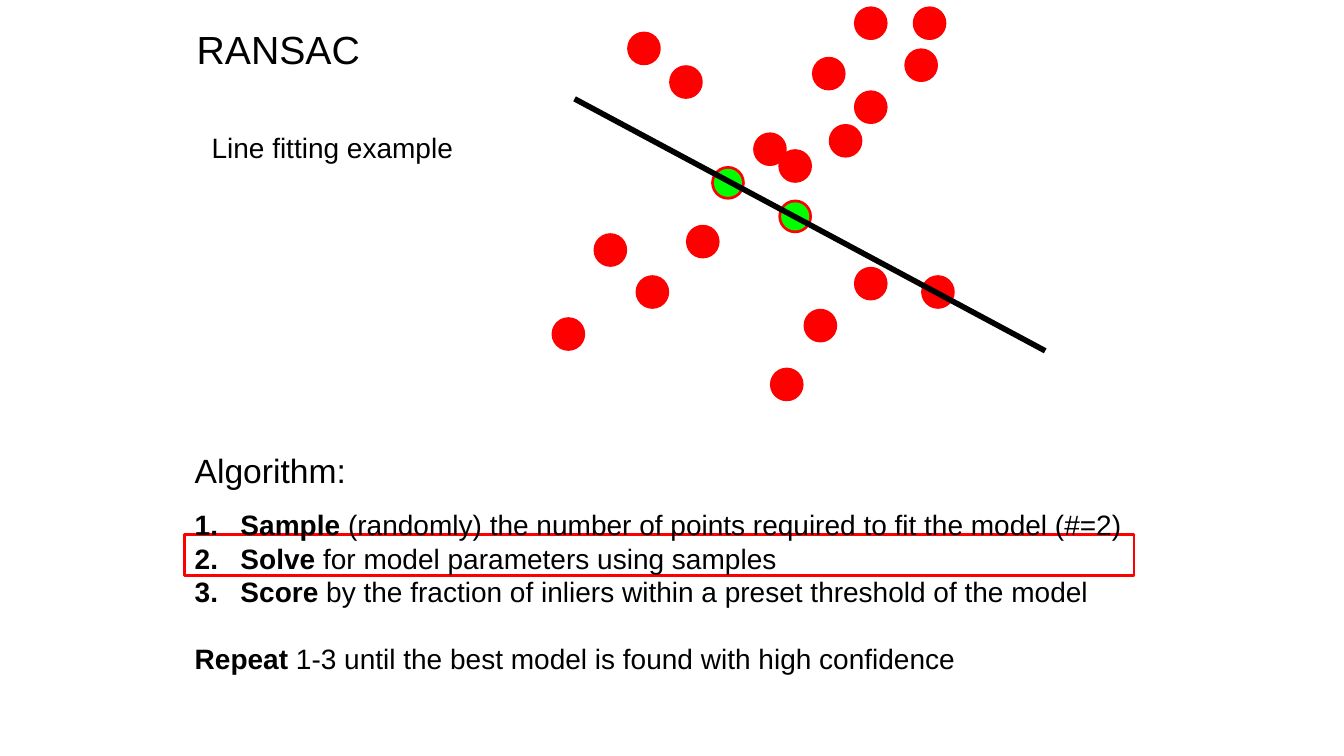
import pptx
import pptx.dml.color
import pptx.enum.shapes
import pptx.enum.text
import pptx.util
from pptx.oxml.xmlchemy import OxmlElement

Pt = pptx.util.Pt
SHAPES = pptx.enum.shapes.MSO_SHAPE
ALIGN = pptx.enum.text.PP_ALIGN

COLORS = {"outlier": "FF0000", "sample": "00FF00", "ink": "000000", "frame": "FF0000"}

# Points lie on a 6 pt grid: (column, row)
GRID, GRID_TOP, DIAMETER = 6, 0.6, 20
SAMPLES = [(85, 20), (93, 24)]
DATA = [
    (110, 33), (102, 32), (71, 28), (76, 33), (66, 38), (97, 7), (99, 15),
    (82, 27), (102, 1), (93, 18), (90, 16), (109, 1), (102, 11), (108, 6),
    (75, 4), (96, 37), (92, 44), (80, 8),
]
STEPS = [
    ("Sample", " (randomly) the number of points required to fit the model (#=2)"),
    ("Solve", " for model parameters using samples"),
    ("Score", " by the fraction of inliers within a preset threshold of the model"),
]
REPEAT = ("Repeat", " 1-3 until the best model is found with high confidence")


def rgb(name):
    return pptx.dml.color.RGBColor.from_string(COLORS[name])


def add_outlined(slide, kind, box, fill, line, width):
    sp = slide.shapes.add_shape(kind, *map(Pt, box))
    sp.shadow.inherit = False
    if fill:
        sp.fill.solid()
        sp.fill.fore_color.rgb = rgb(fill)
    else:
        sp.fill.background()
    if line:
        sp.line.color.rgb = rgb(line)
        sp.line.width = Pt(width)
    else:
        sp.line.fill.background()


def add_point(slide, cell, fill, line=None):
    col, row = cell
    box = (GRID * col, GRID * row + GRID_TOP, DIAMETER, DIAMETER)
    add_outlined(slide, SHAPES.OVAL, box, fill, line, 4)


def add_model_line(slide, start, end):
    line = slide.shapes.add_connector(
        pptx.enum.shapes.MSO_CONNECTOR.STRAIGHT, *map(Pt, start + end))
    line.line.color.rgb = rgb("ink")
    line.line.width = Pt(4)
    line._element.spPr.append(OxmlElement("a:effectLst"))


def add_text_box(slide, box, wrap):
    tf = slide.shapes.add_textbox(*map(Pt, box)).text_frame
    tf.word_wrap = wrap
    return tf


def add_run(p, text, size, bold=False):
    r = p.add_run()
    r.text = text
    font = {"name": "Arial", "size": Pt(size), "bold": bold}
    for key, value in font.items():
        setattr(r.font, key, value)
    r.font.color.rgb = rgb("ink")


def add_label(slide, box, text, size, align):
    p = add_text_box(slide, box, False).paragraphs[0]
    p.alignment = align
    add_run(p, text, size)


def number(p, indent):
    """Give the paragraph an automatic number with a hanging indent."""
    pPr = p._p.get_or_add_pPr()
    pPr.set("marL", str(Pt(indent)))
    pPr.set("indent", str(-Pt(indent)))
    bullet = OxmlElement("a:buAutoNum")
    bullet.set("type", "arabicPeriod")
    pPr.append(bullet)


def add_sentence(tf, lead, rest, gap):
    p = tf.add_paragraph()
    layout = {"line_spacing": Pt(24), "space_before": Pt(gap)}
    for key, value in layout.items():
        setattr(p, key, value)
    add_run(p, lead, 20, True)
    add_run(p, rest, 20)
    return p


def add_algorithm(slide, box):
    tf = add_text_box(slide, box, True)
    add_run(tf.paragraphs[0], "Algorithm:", 24)
    for i, step in enumerate(STEPS):
        number(add_sentence(tf, *step, gap=0 if i else 12), 32.7)
    add_sentence(tf, *REPEAT, gap=24)


def main():
    prs = pptx.Presentation()
    prs.slide_width, prs.slide_height = Pt(960), Pt(540)
    slide = prs.slides.add_slide(prs.slide_layouts[6])

    for cell in DATA:
        add_point(slide, cell, "outlier", "outlier")
    for cell in SAMPLES:
        add_point(slide, cell, "outlier", "outlier")
        add_point(slide, cell, "sample")

    add_label(slide, (132.5, 14.4, 132.5, 41), "RANSAC", 28, ALIGN.CENTER)
    add_model_line(slide, (410.4, 70.6), (746.6, 250.6))
    add_outlined(slide, SHAPES.RECTANGLE, (132, 381.6, 678, 29.5), None, "frame", 2)
    add_algorithm(slide, (132, 318.2, 678, 168.5))
    add_label(slide, (144, 90, 188.6, 31.7), "Line fitting example", 20, ALIGN.LEFT)
    prs.save("out.pptx")


if __name__ == "__main__":
    main()
